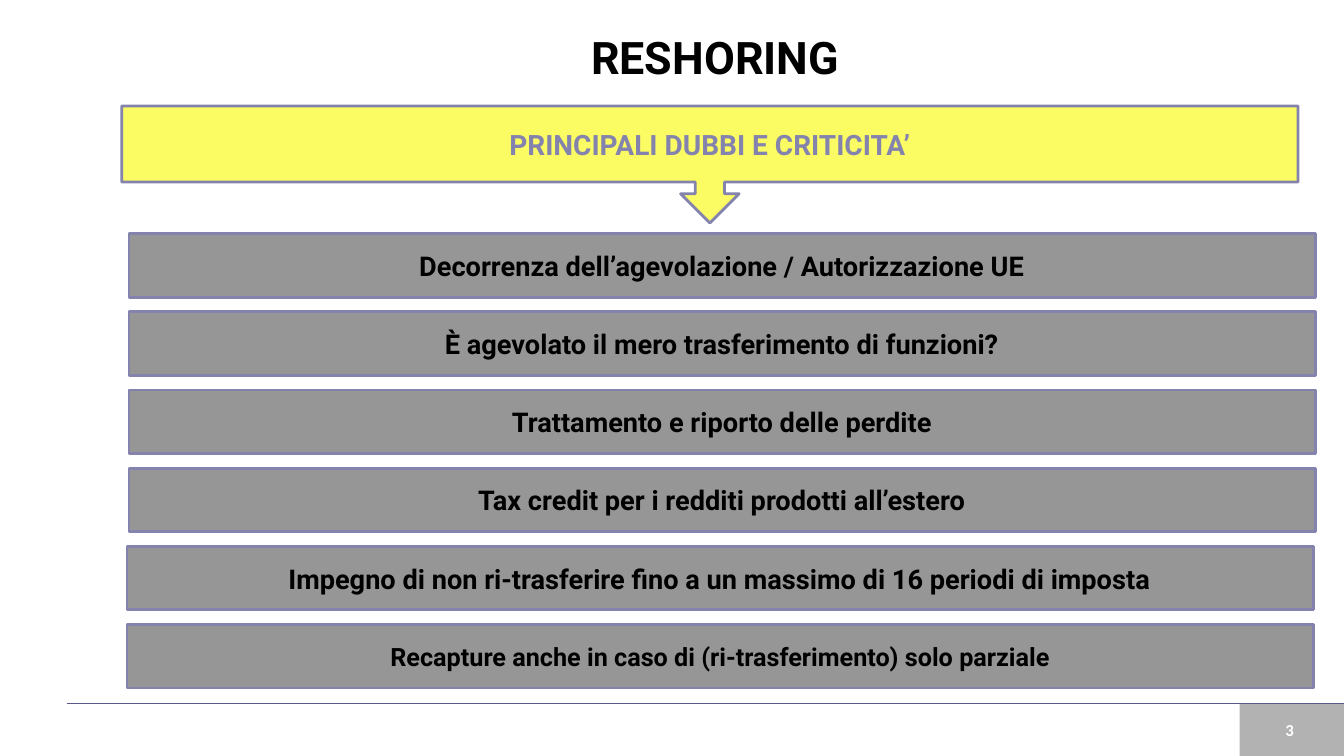
from dataclasses import dataclass

from lxml import etree
from pptx import Presentation
from pptx.dml.color import RGBColor
from pptx.enum.shapes import MSO_CONNECTOR, MSO_SHAPE
from pptx.enum.text import MSO_ANCHOR, MSO_AUTO_SIZE, PP_ALIGN
from pptx.oxml.ns import qn
from pptx.shapes.autoshape import Shape
from pptx.slide import Slide
from pptx.util import Cm, Pt

RECT = MSO_SHAPE.RECTANGLE
CALLOUT = MSO_SHAPE.DOWN_ARROW_CALLOUT
STRAIGHT = MSO_CONNECTOR.STRAIGHT
MIDDLE = MSO_ANCHOR.MIDDLE
CENTER = PP_ALIGN.CENTER
NO_AUTOFIT = MSO_AUTO_SIZE.NONE

BLACK = RGBColor(0x00, 0x00, 0x00)
WHITE = RGBColor(0xFF, 0xFF, 0xFF)
YELLOW = RGBColor(0xFB, 0xFB, 0x64)
GRAY = RGBColor(0x96, 0x96, 0x96)
LAVENDER = RGBColor(0x83, 0x83, 0xAD)
INDIGO = RGBColor(0x59, 0x59, 0x88)

SLIDE_W, SLIDE_H = Cm(33.87), Cm(19.05)
FOOTER_TOP = Cm(17.73)
ISSUE_TOP, ISSUE_PITCH = Cm(5.89), Cm(1.97)
ISSUE_W, ISSUE_H = Cm(29.9), Cm(1.6)


@dataclass
class Issue:
    text: str
    left: float = 3.25
    size: float = 19.4


ISSUES = [
    Issue("Decorrenza dell’agevolazione / Autorizzazione UE"),
    Issue("È agevolato il mero trasferimento di funzioni?"),
    Issue("Trattamento e riporto delle perdite"),
    Issue("Tax credit per i redditi prodotti all’estero"),
    Issue("Impegno di non ri-trasferire fino a un massimo di 16 periodi di imposta",
          left=3.2),
    Issue("Recapture anche in caso di (ri-trasferimento) solo parziale",
          left=3.2, size=18),
]


def write(sp: Shape, text: str, size: float, color: RGBColor,
          font: str = "Roboto", wrap: bool = True) -> None:
    tf = sp.text_frame
    tf.text = text
    tf.word_wrap = wrap
    tf.auto_size = NO_AUTOFIT
    tf.vertical_anchor = MIDDLE
    p = tf.paragraphs[0]
    p.alignment = CENTER
    p.space_before = Pt(0)
    p.font.name = font
    p.font.size = Pt(size)
    p.font.bold = True
    p.font.color.rgb = color


def add_box(slide: Slide, kind: MSO_SHAPE, left: int, top: int,
            width: int, height: int, fill: RGBColor) -> Shape:
    sp = slide.shapes.add_shape(kind, left, top, width, height)
    sp.shadow.inherit = False
    sp.fill.solid()
    sp.fill.fore_color.rgb = fill
    sp.line.color.rgb = LAVENDER
    sp.line.width = Pt(2)
    return sp


def add_footer(slide: Slide) -> None:
    left = Cm(31.24)
    place = (left, FOOTER_TOP, SLIDE_W - left, SLIDE_H - FOOTER_TOP)
    block = add_box(slide, RECT, *place, BLACK)
    block.line.fill.background()
    color = block.fill._xPr.find(qn("a:solidFill"))[0]
    etree.SubElement(color, qn("a:alpha"), val="30000")

    number = slide.shapes.add_textbox(Cm(31.14), FOOTER_TOP, Cm(2.72), Cm(1.32))
    write(number, "3", 12, WHITE, font="Calibri", wrap=False)

    rule = slide.shapes.add_connector(STRAIGHT, Cm(1.68), FOOTER_TOP,
                                      SLIDE_W, FOOTER_TOP)
    rule.line.color.rgb = INDIGO
    rule.line.width = Pt(1)
    etree.SubElement(rule._element.spPr, qn("a:effectLst"))


def main() -> None:
    prs = Presentation()
    prs.slide_width, prs.slide_height = SLIDE_W, SLIDE_H
    slide = prs.slides.add_slide(prs.slide_layouts[5])
    add_footer(slide)

    title = slide.shapes.title
    title.left, title.top = Cm(2.18), Cm(0.66)
    title.width, title.height = Cm(31.69), Cm(1.52)
    write(title, "RESHORING", 32, BLACK)

    heading = add_box(slide, CALLOUT, Cm(3.07), Cm(2.67), Cm(29.64), Cm(2.95), YELLOW)
    write(heading, "PRINCIPALI DUBBI E CRITICITA’", 20, LAVENDER)

    for i, issue in enumerate(ISSUES):
        sp = add_box(slide, RECT, Cm(issue.left), ISSUE_TOP + i * ISSUE_PITCH,
                     ISSUE_W, ISSUE_H, GRAY)
        write(sp, issue.text, issue.size, BLACK)

    prs.save("out.pptx")


if __name__ == "__main__":
    main()
